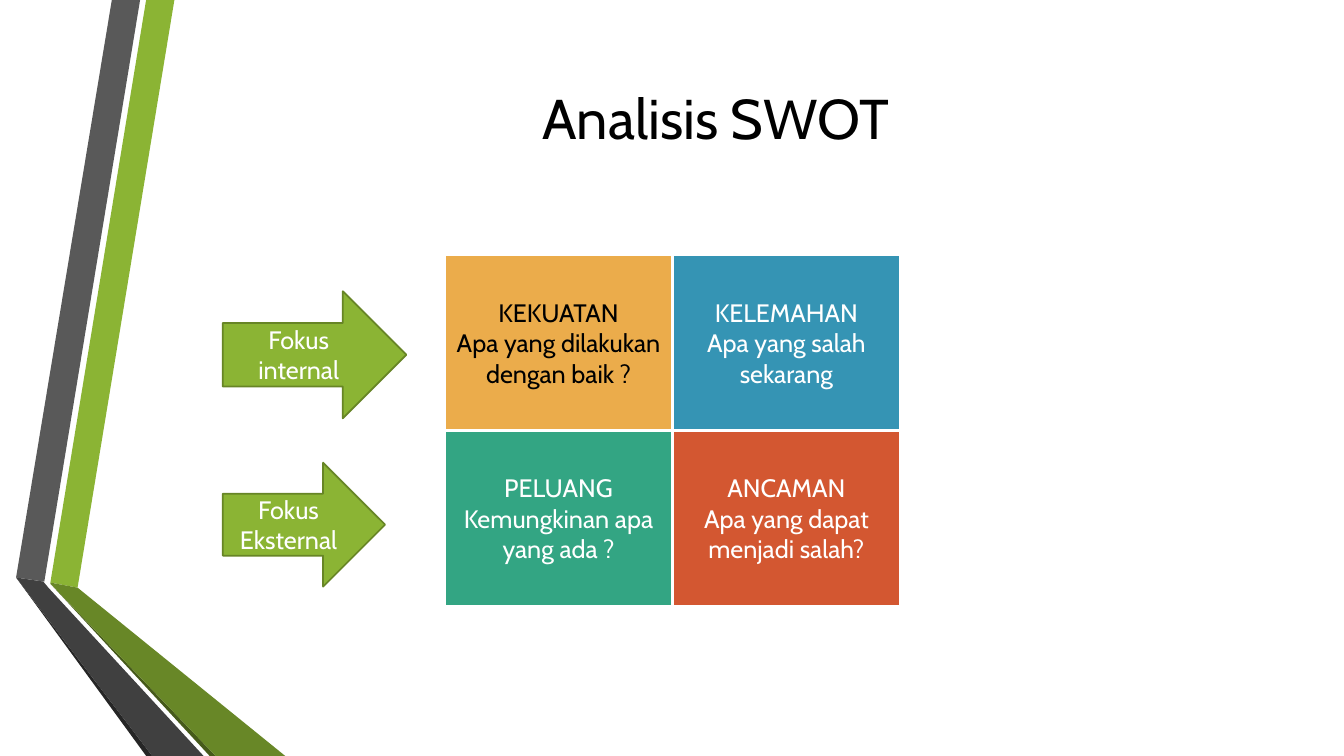
from dataclasses import dataclass

from pptx import Presentation
from pptx.dml.color import RGBColor
from pptx.enum.shapes import MSO_SHAPE as Preset
from pptx.enum.text import MSO_ANCHOR as Anchor, PP_ALIGN as Align
from pptx.util import Inches, Pt


@dataclass(frozen=True)
class Theme:
    font: str = "Cabin"
    title_size: int = 40
    body_size: int = 18
    black: str = "000000"
    white: str = "FFFFFF"
    green: str = "8BB434"
    green_line: str = "678526"
    green_fold: str = "688727"
    green_edge: str = "465A1A"
    gray: str = "595959"
    gray_fold: str = "404040"
    gray_edge: str = "262626"
    amber: str = "EBAC4B"
    blue: str = "3594B4"
    teal: str = "33A583"
    red: str = "D35731"


THEME = Theme()

# Ribbon outlines, from back to front
RIBBONS = [
    (THEME.green, [(0.5, 5.78), (0.77, 5.83), (1.73, 0), (1.45, 0)]),
    (THEME.gray, [(1.39, 0), (1.11, 0), (0.16, 5.73), (0.44, 5.77)]),
    (THEME.gray_edge, [(0.16, 5.73), (1.45, 7.5), (1.51, 7.5)]),
    (THEME.green_edge, [(0.5, 5.79), (2.08, 7.5), (2.14, 7.5)]),
    (THEME.green_fold, [(0.5, 5.78), (0.5, 5.79), (2.14, 7.5), (2.83, 7.5), (0.77, 5.83)]),
    (THEME.gray_fold, [(2.02, 7.5), (0.48, 5.83), (0.43, 5.77), (0.16, 5.73), (1.51, 7.5)]),
]

# SWOT matrix, row by row: fill, text colour, heading, question
CELL_WIDTH, CELL_HEIGHT = 2.26, 1.74
MATRIX_LEFT, MATRIX_TOP = 4.41, 2.53
MATRIX = [
    [
        (THEME.amber, THEME.black, "KEKUATAN", "Apa yang dilakukan dengan baik ?"),
        (THEME.blue, THEME.white, "KELEMAHAN", "Apa yang salah sekarang"),
    ],
    [
        (THEME.teal, THEME.white, "PELUANG", "Kemungkinan apa yang ada ?"),
        (THEME.red, THEME.white, "ANCAMAN", "Apa yang dapat menjadi salah?"),
    ],
]

# Focus arrows: label and box
ARROWS = [
    ("Fokus internal", (2.21, 2.89, 1.82, 1.26)),
    ("Fokus Eksternal", (2.21, 4.59, 1.61, 1.23)),
]


def set_format(target, values):
    for name, value in values.items():
        setattr(target, name, value)


def paint(shape, fill, line=None, line_width=0):
    shape.shadow.inherit = False
    shape.fill.solid()
    shape.fill.fore_color.rgb = RGBColor.from_string(fill)
    if line is None:
        shape.line.fill.background()
    else:
        shape.line.color.rgb = RGBColor.from_string(line)
        shape.line.width = Pt(line_width)


def write_lines(shape, lines, size, color):
    frame = shape.text_frame
    set_format(frame, {"word_wrap": True, "vertical_anchor": Anchor.MIDDLE})
    frame.text = "\n".join(lines)
    for paragraph in frame.paragraphs:
        paragraph.alignment = Align.CENTER
        font = paragraph.runs[0].font
        set_format(font, {"name": THEME.font, "size": Pt(size)})
        font.color.rgb = RGBColor.from_string(color)


def add_ribbon(slide, fill, points):
    corners = [(Inches(x), Inches(y)) for x, y in points]
    builder = slide.shapes.build_freeform(*corners[0])
    builder.add_line_segments(corners[1:], close=True)
    paint(builder.convert_to_shape(), fill)


def add_title(slide, text, box):
    title = slide.shapes.add_textbox(*map(Inches, box))
    write_lines(title, [text], THEME.title_size, THEME.black)


def add_block(slide, preset, box, fill, outline, lines, color):
    shape = slide.shapes.add_shape(preset, *map(Inches, box))
    paint(shape, fill, *outline)
    write_lines(shape, lines, THEME.body_size, color)


def main():
    presentation = Presentation()
    set_format(presentation, {"slide_width": Inches(13.33), "slide_height": Inches(7.5)})
    slide = presentation.slides.add_slide(presentation.slide_layouts[6])

    # Folded ribbons on the left
    for fill, points in RIBBONS:
        add_ribbon(slide, fill, points)

    add_title(slide, "Analisis SWOT", (1.62, 0.56, 10.96, 1.21))

    # Two-by-two matrix
    for row, cells in enumerate(MATRIX):
        for column, (fill, color, *lines) in enumerate(cells):
            box = (MATRIX_LEFT + column * CELL_WIDTH, MATRIX_TOP + row * CELL_HEIGHT,
                   CELL_WIDTH, CELL_HEIGHT)
            add_block(slide, Preset.RECTANGLE, box, fill, (THEME.white, 1.75), lines, color)

    # Arrows pointing at the rows
    for label, box in ARROWS:
        add_block(slide, Preset.RIGHT_ARROW, box, THEME.green, (THEME.green_line, 1.25),
                  [label], THEME.white)

    presentation.save("out.pptx")


if __name__ == "__main__":
    main()
